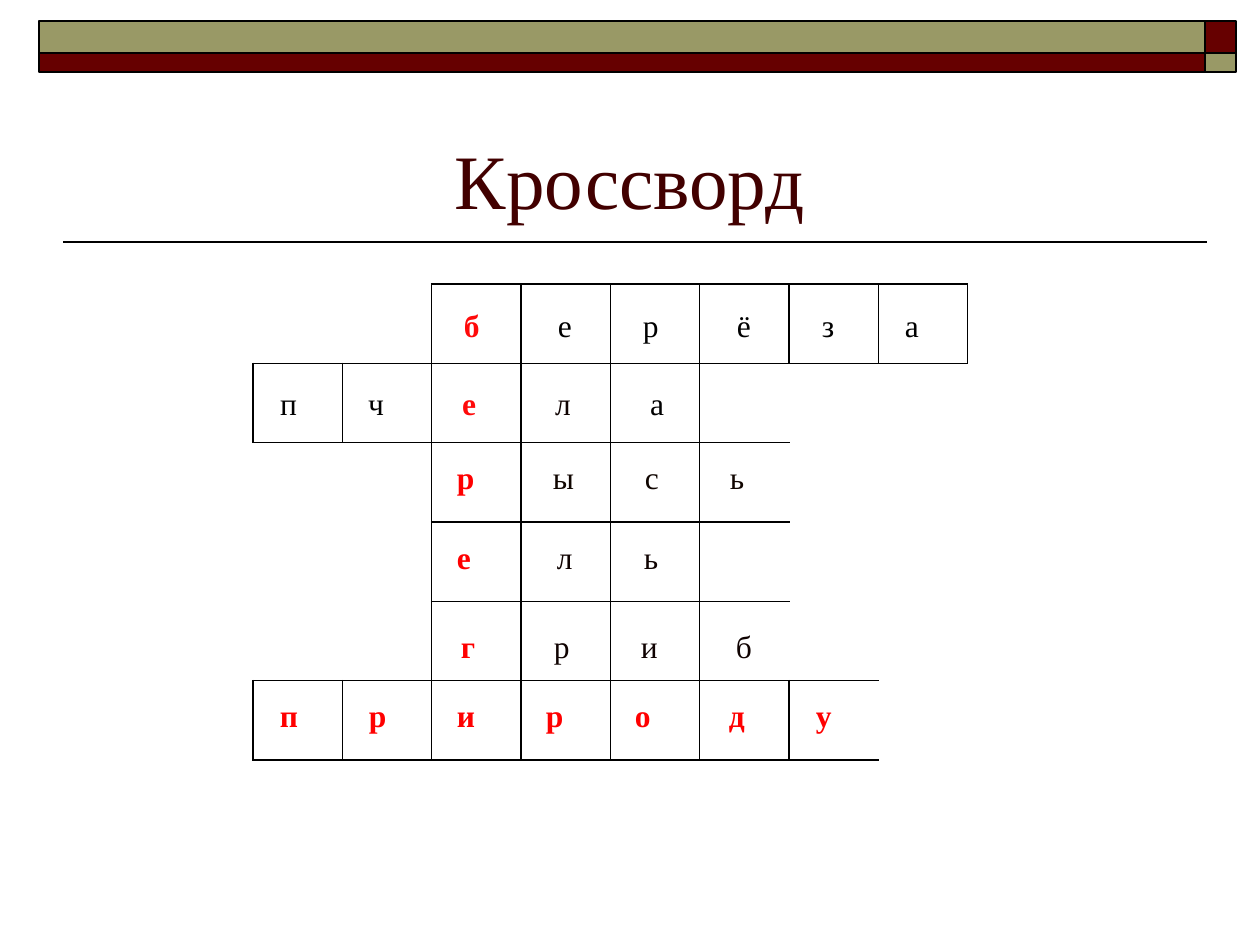
"""Build the crossword slide."""
from lxml.etree import SubElement
from pptx import Presentation
from pptx.dml.color import RGBColor as Rgb
from pptx.enum.shapes import MSO_CONNECTOR as Connector, MSO_SHAPE as Shape
from pptx.enum.text import MSO_ANCHOR as Anchor, MSO_AUTO_SIZE as AutoSize, PP_ALIGN as Align
from pptx.oxml.ns import qn
from pptx.util import Emu, Pt

COLORS = {
    "white": "FFFFFF", "black": "000000", "maroon": "660000", "olive": "999966",
    "title": "420000", "scarlet": "FF0A0A", "red": "FF0000",
    "ink": "0F0201", "brown": "100500",
}
FONT = "Times New Roman"


def px(*lengths):
    return [Emu(round(length * 914400 / 126)) for length in lengths]


def add_span(para, text, color, size, bold=False):
    span = para.add_run()
    span.text = text
    for name, value in {"name": FONT, "size": Pt(size), "bold": bold}.items():
        setattr(span.font, name, value)
    span.font.color.rgb = Rgb.from_string(COLORS[color])


deck = Presentation()
deck.slide_width, deck.slide_height = px(1260, 945)
page = deck.slides.add_slide(deck.slide_layouts[6])

rule = page.shapes.add_connector(Connector.STRAIGHT, *px(1207, 242, 63, 242))
rule.line.color.rgb = Rgb.from_string(COLORS["black"])
rule.line.width = Pt(1)
SubElement(rule._element.spPr, qn("a:effectLst"))

for left, top, width, height, color in [
    (1205, 21, 31, 32, "maroon"),
    (39, 21, 1166, 32, "olive"),
    (39, 53, 1166, 19, "maroon"),
    (1205, 53, 31, 19, "olive"),
]:
    bar = page.shapes.add_shape(Shape.RECTANGLE, *px(left, top, width, height))
    bar.shadow.inherit = False
    bar.fill.solid()
    bar.fill.fore_color.rgb = Rgb.from_string(COLORS[color])
    bar.line.color.rgb = Rgb.from_string(COLORS["black"])
    bar.line.width = Pt(1)

title = page.shapes.add_textbox(*px(63, 73, 1134, 158)).text_frame
title.word_wrap = True
title.vertical_anchor = Anchor.BOTTOM
title.paragraphs[0].alignment = Align.CENTER
add_span(title.paragraphs[0], "Кроссворд", "title", 44)

ROWS, COLUMNS = 6, 8
grid = page.shapes.add_table(ROWS, COLUMNS, *px(253, 284, 715, 476)).table
for flag in ("first_row", "horz_banding"):
    setattr(grid, flag, False)
for column in grid.columns:
    column.width = px(715)[0] // COLUMNS
for row in grid.rows:
    row.height = px(476)[0] // ROWS

edges = {(row, col): "LRTB" for row in range(ROWS) for col in range(COLUMNS)}
edges[1, 5] = edges[3, 5] = "LTB"
for row, col, height, width, sides in [
    (0, 0, 1, 2, "RB"),
    (1, 6, 2, 2, "T"),
    (2, 0, 1, 2, "TR"),
    (3, 0, 2, 1, "B"),
    (3, 1, 2, 1, "RB"),
    (3, 6, 2, 1, "B"),
    (3, 7, 3, 1, ""),
]:
    bottom, right = row + height - 1, col + width - 1
    grid.cell(row, col).merge(grid.cell(bottom, right))
    for y in range(row, bottom + 1):
        for x in range(col, right + 1):
            outer = {"L": x == col, "R": x == right, "T": y == row, "B": y == bottom}
            edges[y, x] = [side for side in sides if outer[side]]

for (row, col), sides in edges.items():
    cell = grid.cell(row, col)
    properties = cell._tc.get_or_add_tcPr()
    for side in "LRTB":
        border = SubElement(properties, qn(f"a:ln{side}"), w=str(Pt(1)))
        if side in sides:
            fill = SubElement(border, qn("a:solidFill"))
            SubElement(fill, qn("a:srgbClr"), val=COLORS["black"])
        else:
            SubElement(border, qn("a:noFill"))
    cell.fill.solid()
    cell.fill.fore_color.rgb = Rgb.from_string(COLORS["white"])

for left, top, width, word, starts, colors in [
    (451, 300, 605, "берёза", (464, 558, 643, 737, 822, 905), ["scarlet"] + ["black"] * 5),
    (268, 378, 412, "пчела", (280, 368, 462, 555, 650),
     ["black", "black", "scarlet", "ink", "black"]),
    (436, 452, 353, "рысь", (457, 553, 645, 730), ["red"] + ["brown"] * 3),
    (436, 532, 287, "ель", (457, 557, 644), ["red"] + ["ink"] * 2),
    (441, 621, 338, "гриб", (461, 554, 641, 736), ["red"] + ["ink"] * 3),
    (268, 690, 591, "природу", (280, 369, 457, 546, 635, 729, 816), ["red"] * 7),
]:
    box = page.shapes.add_textbox(*px(left, top, width, 50)).text_frame
    box.word_wrap = True
    box.auto_size = AutoSize.SHAPE_TO_FIT_TEXT
    box.margin_left = px(starts[0] - left)[0]
    para = box.paragraphs[0]
    tabs = SubElement(para._p.get_or_add_pPr(), qn("a:tabLst"))
    for start in starts[1:]:
        SubElement(tabs, qn("a:tab"), pos=str(px(start - starts[0])[0]), algn="l")
    for index, (letter, color) in enumerate(zip(word, colors)):
        text = "\t" + letter if index else letter
        add_span(para, text, color, 18, color in ("red", "scarlet"))

deck.save("out.pptx")
